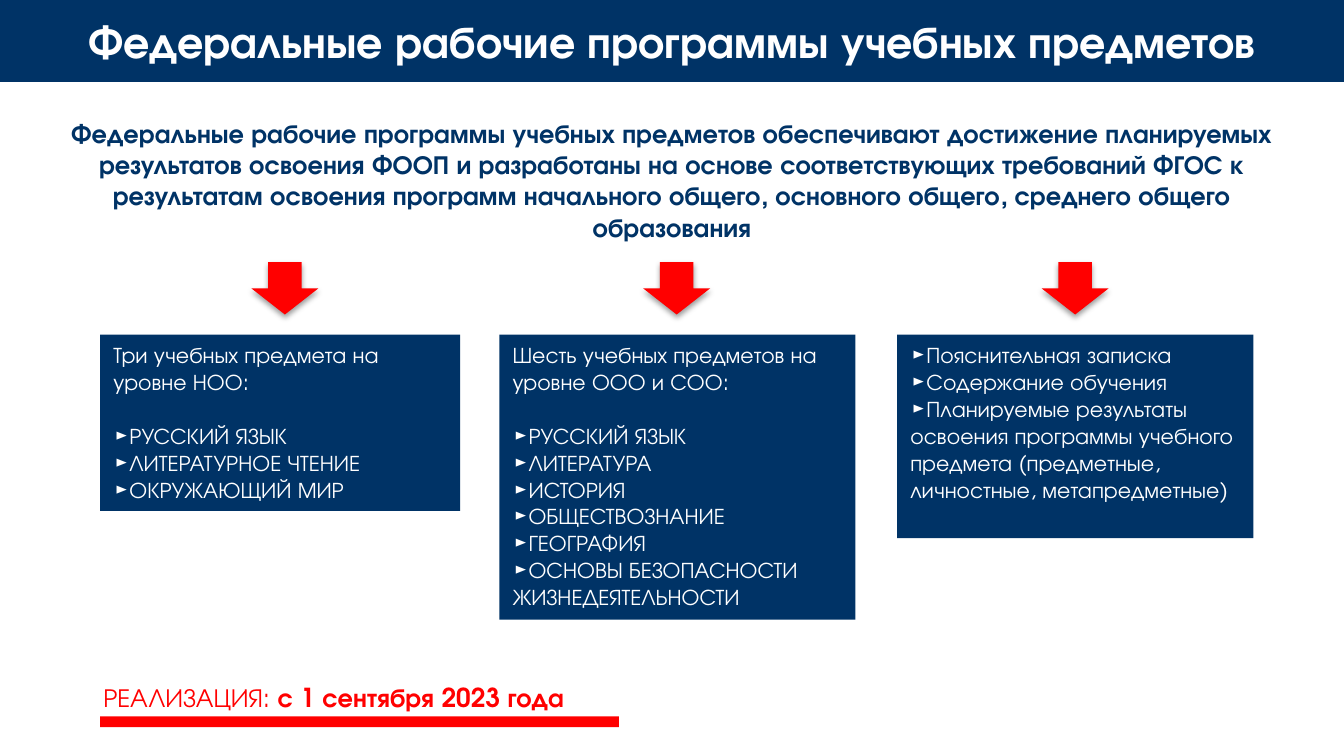
from lxml.etree import SubElement
from pptx import Presentation
from pptx.dml.color import RGBColor
from pptx.enum.shapes import MSO_SHAPE as Shape
from pptx.enum.text import MSO_ANCHOR as Anchor, PP_ALIGN as Align
from pptx.oxml.ns import qn
from pptx.util import Inches, Pt

NAVY = RGBColor(0x00, 0x33, 0x66)
RED = RGBColor(0xFF, 0x00, 0x00)
WHITE = RGBColor(0xFF, 0xFF, 0xFF)
FONT = "TeX Gyre Adventor"

# The slide is a 16:9 grid of square cells, 0.1 inch each.
CELL = Inches(0.1)
COLUMNS, ROWS = 100, 56.25
ARROW_ROW, CARD_ROW = 19.5, 24.9
CARD_SIZE = 12
LINE_ROWS = 2.02
MARK = "►"

TITLE = "Федеральные рабочие программы учебных предметов"
INTRO = (
    "Федеральные рабочие программы учебных предметов обеспечивают достижение "
    "планируемых результатов освоения ФООП и разработаны на основе "
    "соответствующих требований ФГОС к результатам освоения программ "
    "начального общего, основного общего, среднего общего образования"
)

# Card column, card width, arrow column, lines of height, heading, items
CARDS = [
    (7.45, 26.8, 18.7, 6, "Три учебных предмета на уровне НОО:",
     ["РУССКИЙ ЯЗЫК", "ЛИТЕРАТУРНОЕ ЧТЕНИЕ", "ОКРУЖАЮЩИЙ МИР"]),
    (37.15, 26.5, 47.85, 10, "Шесть учебных предметов на уровне ООО и СОО:",
     ["РУССКИЙ ЯЗЫК", "ЛИТЕРАТУРА", "ИСТОРИЯ", "ОБЩЕСТВОЗНАНИЕ",
      "ГЕОГРАФИЯ", "ОСНОВЫ БЕЗОПАСНОСТИ ЖИЗНЕДЕЯТЕЛЬНОСТИ"]),
    (66.75, 26.5, 77.5, 7, None,
     ["Пояснительная записка", "Содержание обучения",
      "Планируемые результаты освоения программы учебного предмета "
      "(предметные, личностные, метапредметные)"]),
]


def grid(*cells):
    return [round(cell * CELL) for cell in cells]


def add_block(slide, kind, column, row, width, height, color):
    shape = slide.shapes.add_shape(kind, *grid(column, row, width, height))
    shape.shadow.inherit = False
    shape.fill.solid()
    shape.fill.fore_color.rgb = color
    shape.line.fill.background()
    return shape


def add_text_box(slide, column, row, width, height):
    return slide.shapes.add_textbox(*grid(column, row, width, height))


def prepare_frame(shape, anchor=Anchor.TOP, inset=0.5):
    """Set wrapping, anchor and vertical insets, and return the text frame."""
    frame = shape.text_frame
    frame.word_wrap = True
    frame.vertical_anchor = anchor
    frame.margin_top, frame.margin_bottom = grid(inset, inset)
    return frame


def add_text(paragraph, text, size=CARD_SIZE, color=WHITE, bold=False,
             align=Align.LEFT, space_before=0):
    paragraph.alignment = align
    paragraph.space_before = Pt(space_before)
    run = paragraph.add_run()
    run.text = text
    run.font.name = FONT
    run.font.size = Pt(size)
    run.font.bold = bold
    run.font.color.rgb = color


def add_soft_shadow(shape):
    effects = shape.element.spPr.find(qn("a:effectLst"))
    shadow = SubElement(effects, qn("a:outerShdw"), blurRad=str(Pt(3.1)),
                        dist=str(Pt(1.6)), dir="5400000", rotWithShape="0")
    color = SubElement(shadow, qn("a:srgbClr"), val="000000")
    SubElement(color, qn("a:alpha"), val="38000")


def add_arrow(slide, column):
    arrow = add_block(slide, Shape.DOWN_ARROW, column, ARROW_ROW, 5, 3.9, RED)
    add_soft_shadow(arrow)


def add_card(slide, column, width, lines, heading, items):
    height = lines * LINE_ROWS + 1
    card = add_block(slide, Shape.RECTANGLE, column, CARD_ROW, width, height, NAVY)
    frame = prepare_frame(card)
    paragraph = frame.paragraphs[0]
    gap = 0
    if heading:
        add_text(paragraph, heading)
        paragraph = frame.add_paragraph()
        gap = CARD_SIZE * 1.2
    for index, item in enumerate(items):
        if index:
            paragraph = frame.add_paragraph()
        add_text(paragraph, MARK + item, space_before=0 if index else gap)


def add_title(slide):
    banner = add_block(slide, Shape.RECTANGLE, 0, 0, COLUMNS, 6.1, NAVY)
    frame = prepare_frame(banner, Anchor.MIDDLE, inset=1)
    add_text(frame.paragraphs[0], TITLE, size=24, bold=True, align=Align.CENTER)


def add_intro(slide):
    frame = prepare_frame(add_text_box(slide, 2.75, 7.7, 94.5, 44.3), inset=1)
    add_text(frame.paragraphs[0], INTRO, size=14, color=NAVY, bold=True,
             align=Align.CENTER)


def add_deadline(slide):
    frame = prepare_frame(add_text_box(slide, 6.7, 50.2, 41.8, 3.4))
    paragraph = frame.paragraphs[0]
    add_text(paragraph, "РЕАЛИЗАЦИЯ: ", size=14, color=RED)
    add_text(paragraph, "с 1 сентября 2023 года", size=14, color=RED, bold=True)
    add_block(slide, Shape.RECTANGLE, 7.45, 53.3, 38.6, 0.8, RED)


def main():
    presentation = Presentation()
    presentation.slide_width, presentation.slide_height = grid(COLUMNS, ROWS)
    slide = presentation.slides.add_slide(presentation.slide_layouts[6])
    add_intro(slide)
    for column, width, arrow_column, lines, heading, items in CARDS:
        add_arrow(slide, arrow_column)
        add_card(slide, column, width, lines, heading, items)
    add_title(slide)
    add_deadline(slide)
    presentation.save("out.pptx")


if __name__ == "__main__":
    main()
